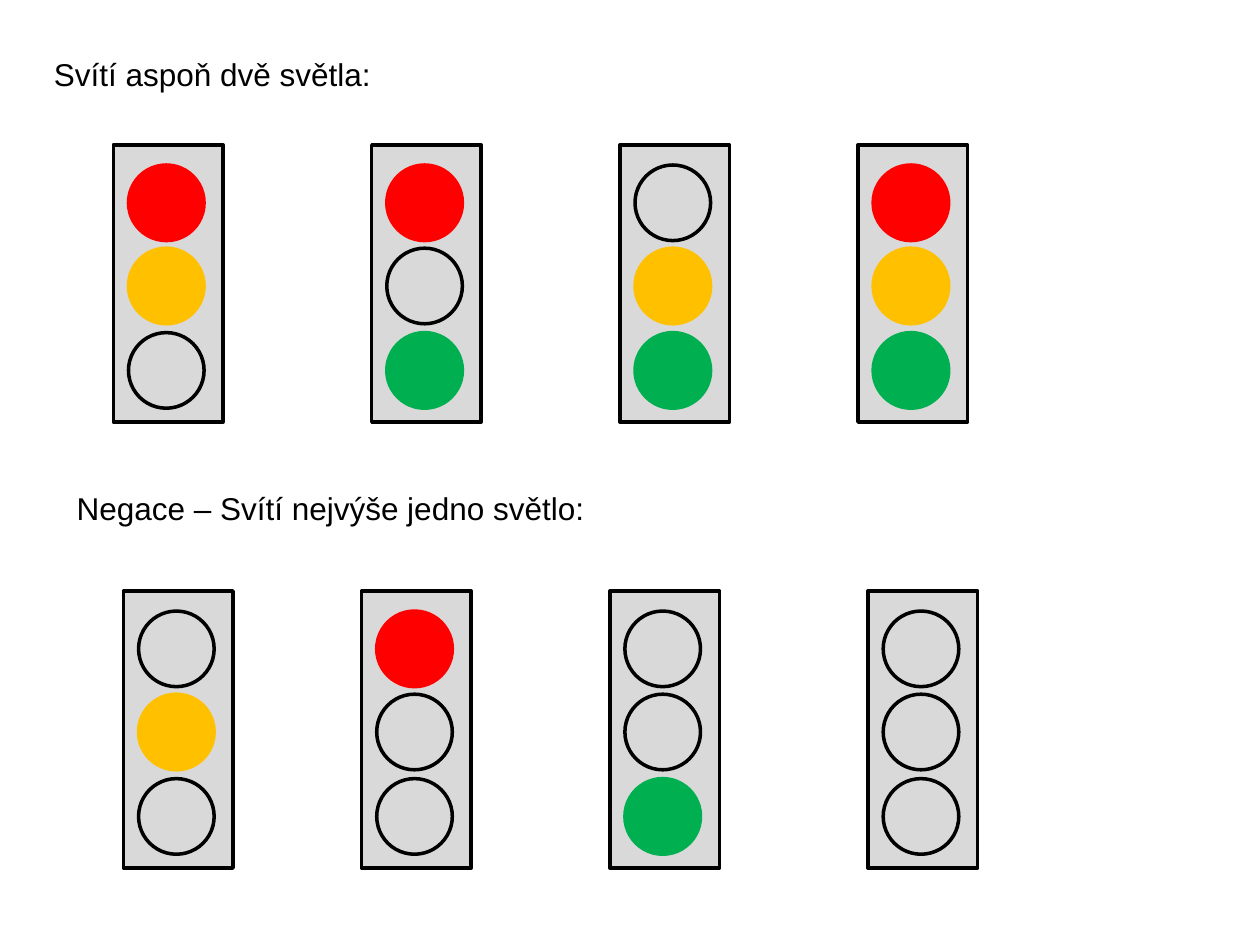
from pptx import Presentation
from pptx.dml.color import RGBColor
from pptx.enum.shapes import MSO_SHAPE
from pptx.enum.text import MSO_AUTO_SIZE
from pptx.util import Inches, Pt

BLACK, HOUSING = "000000", "D9D9D9"
LAMPS = [("red", "FF0000", 0.16), ("amber", "FFC000", 0.82), ("green", "00B050", 1.49)]
LAMP_INSET, LAMP_SIZE = 0.12, 0.6
HOUSING_WIDTH, HOUSING_HEIGHT = 0.87, 2.2

STATEMENTS = [
    {"heading": "Svítí aspoň dvě světla:", "heading_box": (0.33, 0.39, 2.72, 0.4), "top": 1.15,
     "signals": [(0.9, {"red", "amber"}), (2.95, {"red", "green"}),
                 (4.92, {"amber", "green"}), (6.81, {"red", "amber", "green"})]},
    {"heading": "Negace – Svítí nejvýše jedno světlo:", "heading_box": (0.51, 3.83, 4.23, 0.4), "top": 4.69,
     "signals": [(0.98, {"amber"}), (2.87, {"red"}), (4.84, {"green"}), (6.89, set())]},
]


def color(value):
    return RGBColor.from_string(value)


def add_text(slide, text, box, size=18, font="Arial", ink=BLACK):
    heading = slide.shapes.add_textbox(*map(Inches, box))
    frame = heading.text_frame
    frame.word_wrap = False
    frame.auto_size = MSO_AUTO_SIZE.SHAPE_TO_FIT_TEXT
    run = frame.paragraphs[0].add_run()
    run.text = text
    run.font.size = Pt(size)
    run.font.name = font
    run.font.color.rgb = color(ink)


def add_part(signal, preset, box, fill=None, line=BLACK):
    part = signal.shapes.add_shape(preset, *map(Inches, box))
    part.shadow.inherit = False
    if fill:
        part.fill.solid()
        part.fill.fore_color.rgb = color(fill)
    else:
        part.fill.background()
    part.line.color.rgb = color(line)
    part.line.width = Pt(2)


def add_signal(slide, left, top, lit):
    signal = slide.shapes.add_group_shape()
    add_part(signal, MSO_SHAPE.RECTANGLE, (left, top, HOUSING_WIDTH, HOUSING_HEIGHT), fill=HOUSING)
    for lamp, glow, offset in LAMPS:
        box = (left + LAMP_INSET, top + offset, LAMP_SIZE, LAMP_SIZE)
        if lamp in lit:
            add_part(signal, MSO_SHAPE.OVAL, box, fill=glow, line=glow)
        else:
            add_part(signal, MSO_SHAPE.OVAL, box)


def main():
    deck = Presentation()
    deck.slide_width, deck.slide_height = Inches(10), Inches(7.5)
    slide = deck.slides.add_slide(deck.slide_layouts.get_by_name("Blank"))
    for statement in STATEMENTS:
        add_text(slide, statement["heading"], statement["heading_box"])
        for left, lit in statement["signals"]:
            add_signal(slide, left, statement["top"], lit)
    deck.save("out.pptx")


if __name__ == "__main__":
    main()
